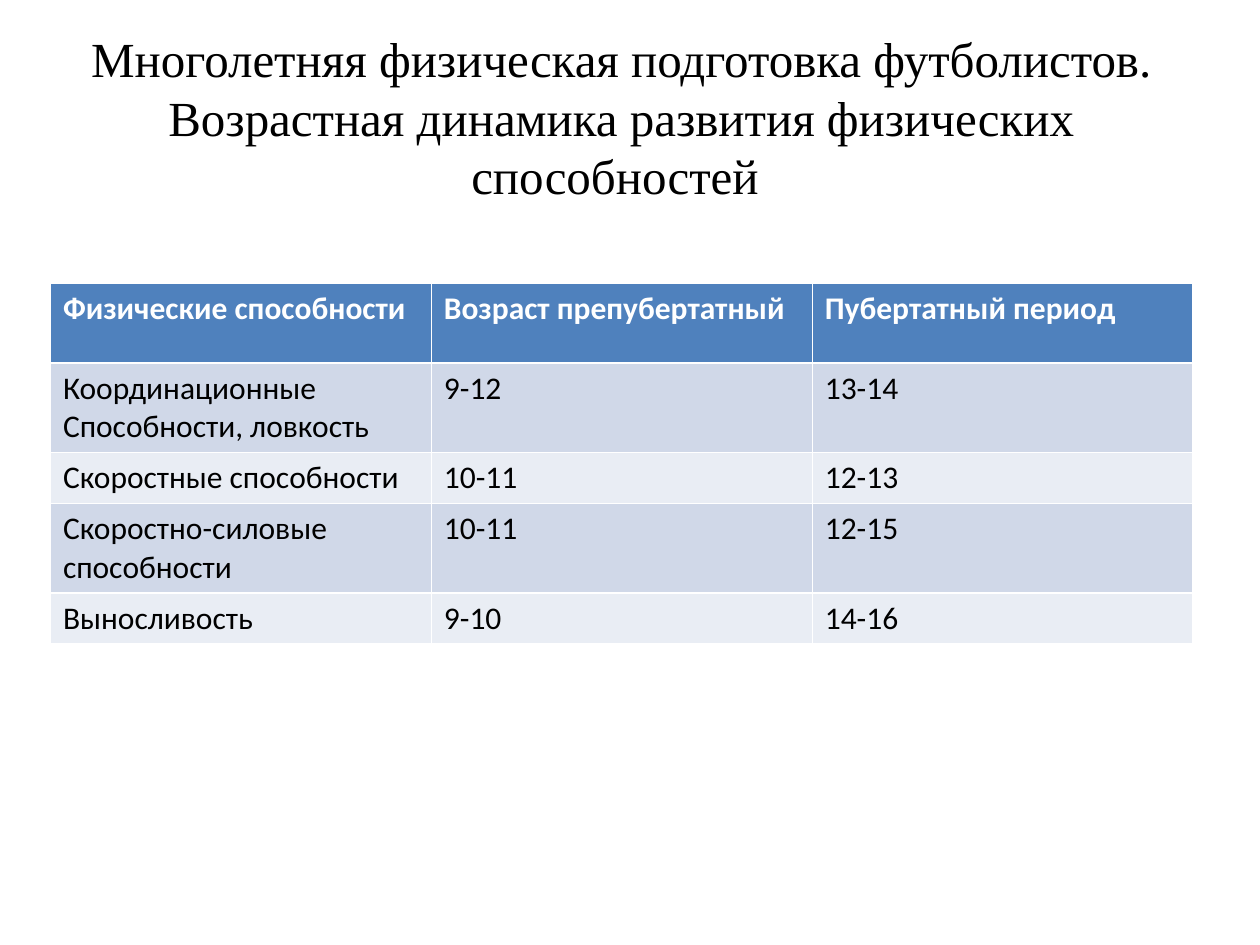
"""Build a slide with a table of age ranges for developing physical abilities."""
from pptx import Presentation
from pptx.dml.color import RGBColor
from pptx.enum.text import MSO_ANCHOR, MSO_AUTO_SIZE, PP_ALIGN
from pptx.util import Inches, Pt

CENTER = PP_ALIGN.CENTER
LEFT = PP_ALIGN.LEFT
MIDDLE = MSO_ANCHOR.MIDDLE
NO_AUTOFIT = MSO_AUTO_SIZE.NONE
BLACK = RGBColor(0x00, 0x00, 0x00)
WHITE = RGBColor(0xFF, 0xFF, 0xFF)
HEADER_BLUE = RGBColor(0x4F, 0x81, 0xBD)
BANDS = [RGBColor(0xE9, 0xED, 0xF4), RGBColor(0xD0, 0xD8, 0xE8)]

TITLE = (
    "Многолетняя физическая подготовка футболистов. "
    "Возрастная динамика развития физических способностей "
)
ROWS = [
    ("Физические способности", "Возраст препубертатный", "Пубертатный период"),
    ("Координационные\nСпособности, ловкость", "9-12", "13-14"),
    ("Скоростные способности", "10-11", "12-13"),
    ("Скоростно-силовые способности", "10-11", "12-15"),
    ("Выносливость", "9-10", "14-16"),
]
ROW_HEIGHTS = [0.63, 0.71, 0.4, 0.71, 0.4]
TABLE_WIDTH = 9.07


def write_text(text_frame, text, size=18, font="Calibri", color=BLACK, bold=False, align=LEFT):
    text_frame.text = text
    for paragraph in text_frame.paragraphs:
        paragraph.alignment = align
        for run in paragraph.runs:
            run.font.size = Pt(size)
            run.font.name = font
            run.font.color.rgb = color
            run.font.bold = bold


presentation = Presentation()
presentation.slide_width = Inches(10)
presentation.slide_height = Inches(7.5)
slide = presentation.slides.add_slide(presentation.slide_layouts[5])

title = slide.shapes.title
title.left, title.top = Inches(0.43), Inches(0.3)
title.width, title.height = Inches(9), Inches(1.25)
title.text_frame.word_wrap = True
title.text_frame.auto_size = NO_AUTOFIT
title.text_frame.vertical_anchor = MIDDLE
write_text(title.text_frame, TITLE, size=28, font="Times New Roman", align=CENTER)

table = slide.shapes.add_table(
    len(ROWS), len(ROWS[0]),
    Inches(0.4), Inches(2.25), Inches(TABLE_WIDTH), Inches(sum(ROW_HEIGHTS)),
).table
for column in table.columns:
    column.width = Inches(TABLE_WIDTH / len(ROWS[0]))

for row_index, (texts, height) in enumerate(zip(ROWS, ROW_HEIGHTS)):
    table.rows[row_index].height = Inches(height)
    is_header = row_index == 0
    for column_index, text in enumerate(texts):
        cell = table.cell(row_index, column_index)
        cell.fill.solid()
        cell.fill.fore_color.rgb = HEADER_BLUE if is_header else BANDS[row_index % 2]
        write_text(cell.text_frame, text, color=WHITE if is_header else BLACK, bold=is_header)

presentation.save("out.pptx")
